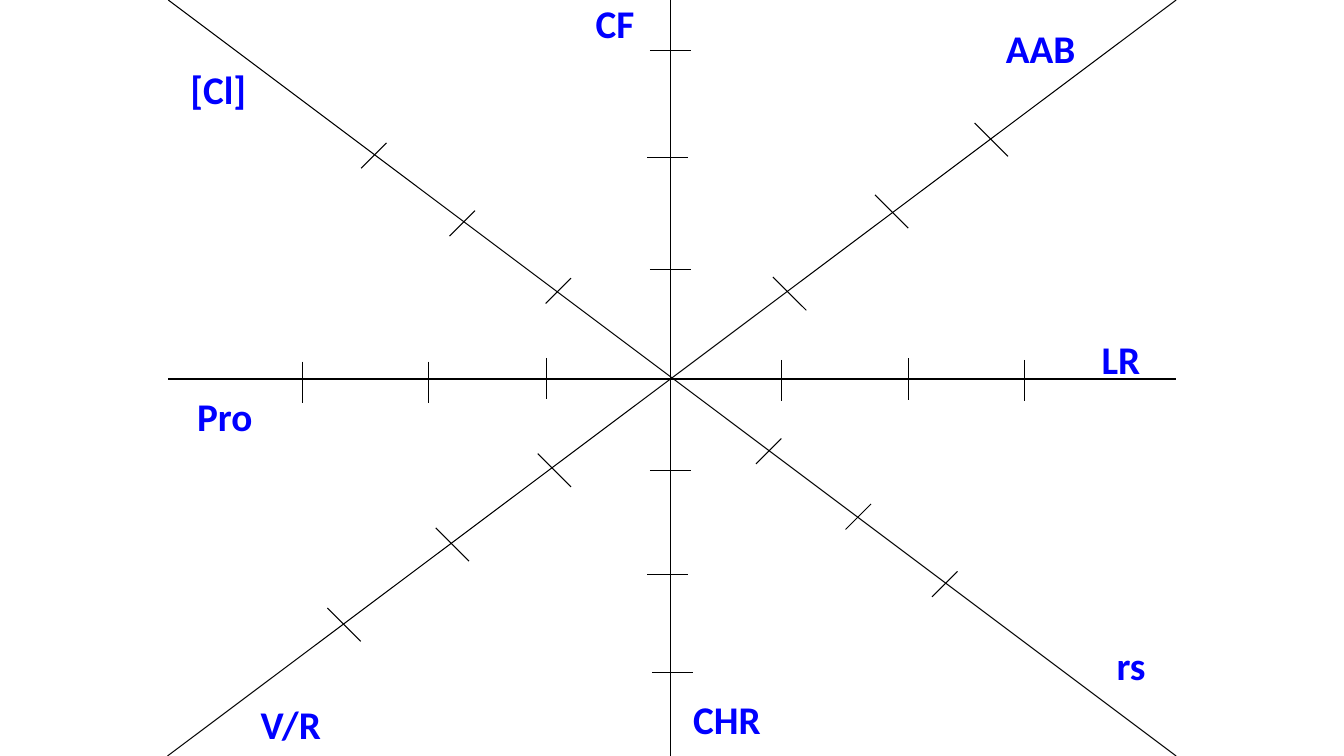
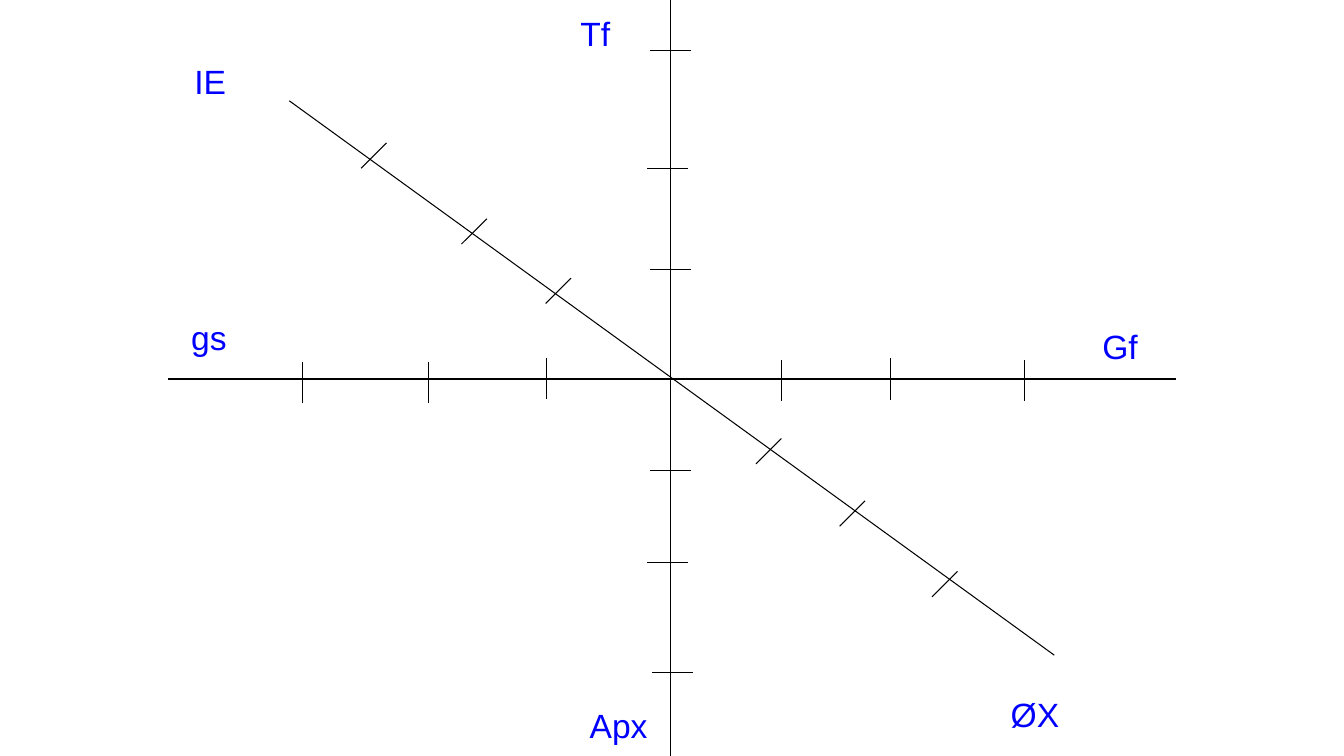
from dataclasses import dataclass

from lxml.etree import SubElement
from pptx import Presentation
from pptx.dml.color import RGBColor
from pptx.enum.shapes import MSO_CONNECTOR
from pptx.enum.text import MSO_AUTO_SIZE
from pptx.oxml.ns import qn
from pptx.util import Cm, Pt


@dataclass(frozen=True)
class Theme:
    ink: RGBColor = RGBColor(0, 0, 0)
    blue: RGBColor = RGBColor(0, 0, 255)
    line: float = 0.75
    large: int = 28
    small: int = 24


theme = Theme()
deck = Presentation()
deck.slide_width, deck.slide_height = Cm(33.87), Cm(19.05)


def add_line(slide, start, end):
    line = slide.shapes.add_connector(
        MSO_CONNECTOR.STRAIGHT, *(Cm(v) for v in (*start, *end)))
    line.line.color.rgb = theme.ink
    line.line.width = Pt(theme.line)
    SubElement(line._element.spPr, qn("a:effectLst"))


def add_text(slide, text, left, top, width, *, font, size, bold=False):
    # Box height follows the type size: one line plus the insets
    box = slide.shapes.add_textbox(
        Cm(left), Cm(top), Cm(width), Cm(size * 0.05 + 0.06))
    frame = box.text_frame
    frame.word_wrap = True
    frame.auto_size = MSO_AUTO_SIZE.SHAPE_TO_FIT_TEXT
    run = frame.paragraphs[0].add_run()
    run.text = text
    run.font.name, run.font.size, run.font.bold = font, Pt(size), bold
    run.font.color.rgb = theme.blue


# Half length of a tick in x and y, by direction
flat, stand, fall, rise = (0.52, 0), (0, 0.52), (0.42, 0.42), (0.32, -0.32)

# Axes and tick centres that both slides share
cross = [((16.89, 0), (16.89, 19.05)), ((4.24, 9.55), (29.64, 9.55))]
common = {
    flat: [(16.9, 1.27), (16.9, 6.78), (16.9, 11.86), (16.95, 16.94)],
    stand: [(7.62, 9.63), (10.8, 9.63), (13.77, 9.54), (19.69, 9.59),
            (25.83, 9.59)],
    rise: [(9.42, 3.92), (14.07, 7.33), (19.37, 11.37), (23.81, 14.72)],
}

# What differs on each slide
charts = [
    dict(
        axes=[((29.64, 0), (4.22, 19.05)), ((4.24, 0), (29.64, 19.05))],
        ticks={
            flat: [(16.83, 3.96), (16.83, 14.48)],
            stand: [(22.89, 9.55)],
            rise: [(11.65, 5.63), (21.63, 13.02)],
            fall: [(8.67, 15.74), (11.4, 13.72), (13.97, 11.85),
                   (19.9, 7.4), (22.47, 5.33), (24.98, 3.52)],
        },
        style=dict(font="Calibri", size=theme.large, bold=True),
        labels=[
            ("CF", 14.76, -0.13, 1.57),
            ("AAB", 25.1, 0.48, 2.36),
            ("LR", 27.51, 8.33, 2.18),
            ("rs", 27.89, 16.03, 1.55),
            ("CHR", 17.22, 17.4, 2.59),
            ("V/R", 6.32, 17.53, 2.21),
            ("Pro", 4.72, 9.75, 2.21),
            ("[Cl]", 4.55, 1.52, 2.01),
        ],
    ),
    dict(
        axes=[((7.29, 2.54), (26.57, 16.51))],
        ticks={
            flat: [(16.83, 4.24), (16.83, 14.17)],
            stand: [(22.43, 9.55)],
            rise: [(11.95, 5.83), (21.48, 12.94)],
        },
        style=dict(font="Arial", size=theme.small),
        labels=[
            ("Tf", 14.38, 0.2, 1.55),
            ("Gf", 27.53, 8.08, 1.63),
            ("ØX", 25.22, 17.35, 1.91),
            ("Apx", 14.61, 17.63, 2.03),
            ("gs", 4.57, 7.87, 1.68),
            ("IE", 4.65, 1.42, 1.4),
        ],
    ),
]

# Draw axes, ticks and labels
for chart in charts:
    slide = deck.slides.add_slide(deck.slide_layouts[6])
    for start, end in cross + chart["axes"]:
        add_line(slide, start, end)
    for ticks in (common, chart["ticks"]):
        for (dx, dy), spots in ticks.items():
            for x, y in spots:
                add_line(slide, (x - dx, y - dy), (x + dx, y + dy))
    for label in chart["labels"]:
        add_text(slide, *label, **chart["style"])

deck.save("out.pptx")
